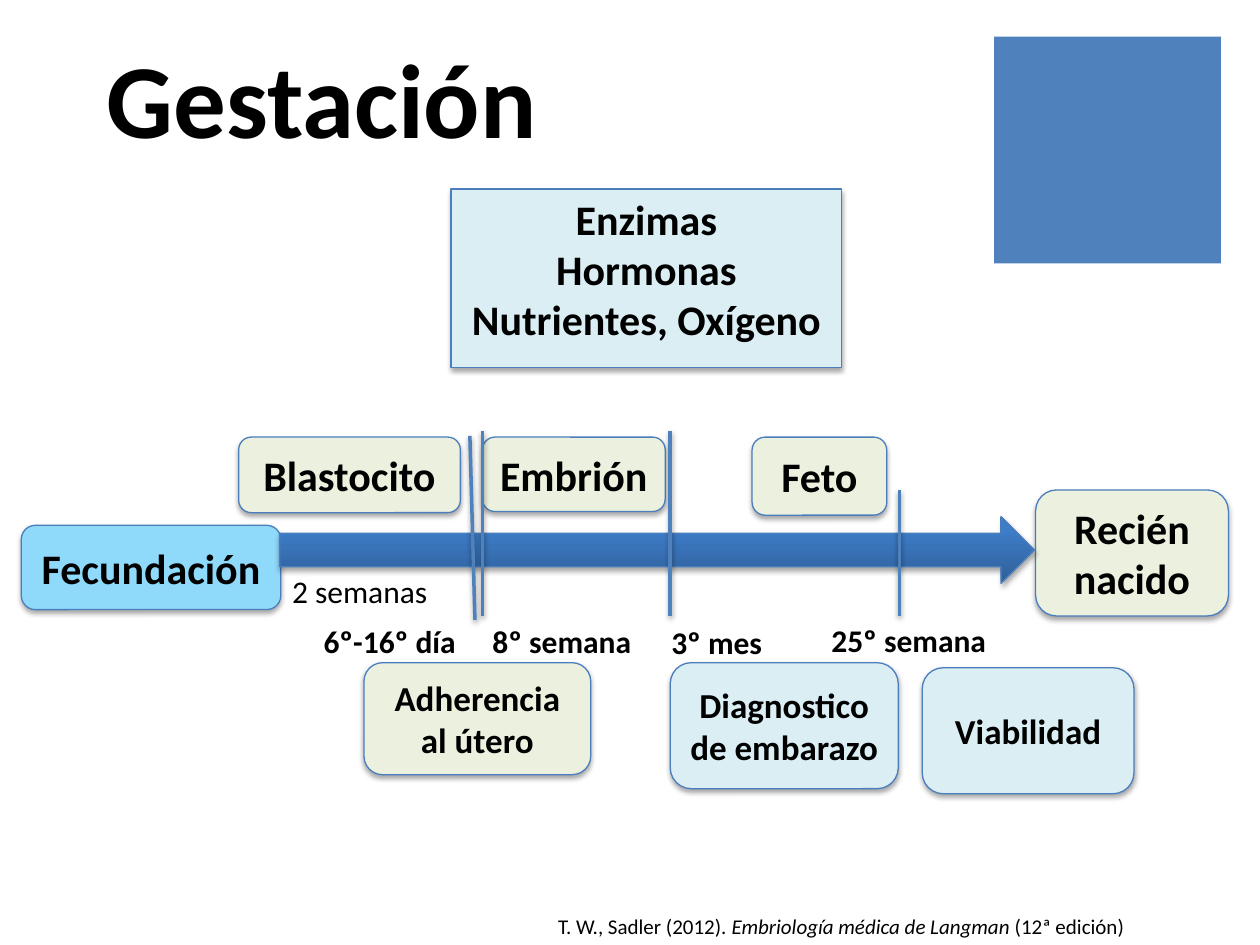
from dataclasses import dataclass

from pptx import Presentation
from pptx.dml.color import RGBColor
from pptx.enum.shapes import MSO_CONNECTOR, MSO_SHAPE
from pptx.enum.text import MSO_ANCHOR, PP_ALIGN
from pptx.oxml import parse_xml
from pptx.util import Pt

RECT = MSO_SHAPE.RECTANGLE
ROUND = MSO_SHAPE.ROUNDED_RECTANGLE
ARROW = MSO_SHAPE.RIGHT_ARROW
STRAIGHT = MSO_CONNECTOR.STRAIGHT
TOP, MIDDLE = MSO_ANCHOR.TOP, MSO_ANCHOR.MIDDLE
LEFT, CENTER = PP_ALIGN.LEFT, PP_ALIGN.CENTER
NS = "http://schemas.openxmlformats.org/drawingml/2006/main"


@dataclass(frozen=True)
class Theme:
    font: str = "Calibri"
    text: str = "000000"
    accent: str = "4F81BD"
    outline: str = "4B7EBC"
    sky: str = "8FD9FB"
    green: str = "EBF1DE"
    pale: str = "DBEEF4"
    arrow_dark: str = "2F5F99"
    arrow_light: str = "3D7CC7"
    title: int = 60
    stage: int = 24
    card: int = 20
    label: int = 18
    source: int = 12


T = Theme()


def rgb(value):
    return RGBColor.from_string(value)


def add_shadow(sp, alpha, dist):
    sp._element.spPr.append(parse_xml(
        f'<a:effectLst xmlns:a="{NS}"><a:outerShdw blurRad="{Pt(3.1)}" dist="{Pt(dist)}" '
        f'dir="5400000" rotWithShape="0"><a:srgbClr val="000000">'
        f'<a:alpha val="{alpha * 1000}"/></a:srgbClr></a:outerShdw></a:effectLst>'))


def write(sp, paragraphs, size, bold=True, align=LEFT, anchor=TOP, wrap=True,
          insets=(7.2, 3.6, 7.2, 3.6)):
    tf = sp.text_frame
    tf.word_wrap = wrap
    tf.vertical_anchor = anchor
    tf.margin_left, tf.margin_top, tf.margin_right, tf.margin_bottom = map(Pt, insets)
    for i, runs in enumerate(paragraphs):
        p = tf.add_paragraph() if i else tf.paragraphs[0]
        p.alignment = align
        for text, italic in runs:
            r = p.add_run()
            r.text = text
            r.font.name = T.font
            r.font.size = Pt(size)
            r.font.bold = bold
            r.font.italic = italic
            r.font.color.rgb = rgb(T.text)


def add_text(s, box, text, size, **fmt):
    sp = s.shapes.add_textbox(*map(Pt, box))
    runs = [(text, False)] if isinstance(text, str) else text
    write(sp, [runs], size, **fmt)


def add_box(s, kind, box, fill):
    sp = s.shapes.add_shape(kind, *map(Pt, box))
    sp.fill.solid()
    sp.fill.fore_color.rgb = rgb(fill)
    sp.line.color.rgb = rgb(T.outline)
    sp.line.width = Pt(0.75)
    add_shadow(sp, 35, 1.8)
    return sp


def add_card(s, kind, box, fill, lines, size, **fmt):
    sp = add_box(s, kind, box, fill)
    write(sp, [[(line, False)] for line in lines], size,
          align=CENTER, anchor=MIDDLE, **fmt)


def add_arrow(s, box):
    sp = add_box(s, ARROW, box, T.arrow_dark)
    sp.fill.gradient()
    sp.fill.gradient_angle = 90
    dark, light = sp.fill.gradient_stops
    dark.position, light.position = 0, 0.8
    dark.color.rgb = rgb(T.arrow_dark)
    light.color.rgb = rgb(T.arrow_light)


def add_marker(s, start, end):
    c = s.shapes.add_connector(STRAIGHT, *map(Pt, start + end))
    c.line.color.rgb = rgb(T.accent)
    c.line.width = Pt(2)
    add_shadow(c, 38, 1.6)


def build_header(s, x, y, w, h):
    side = 129.6
    sp = s.shapes.add_shape(RECT, *map(Pt, (x + w - side, y, side, side)))
    sp.fill.solid()
    sp.fill.fore_color.rgb = rgb(T.accent)
    sp.line.fill.background()
    sp.shadow.inherit = False
    add_text(s, (x, y + 6.5, 494.6, h), "Gestación", T.title, anchor=MIDDLE)


def build_supplies(s, x, y, w, h):
    add_card(s, RECT, (x, y, w, h), T.pale,
             ["Enzimas", "Hormonas", "Nutrientes, Oxígeno"], T.stage,
             insets=(7.2, 3.6, 7.2, 14.6))


def build_timeline(s, x, y, w, h):
    stages = [
        ("Fecundación", 0, 54, 148.3, 48.2, T.sky),
        ("Embrión", 263.5, 3.6, 104.4, 42.5, T.green),
        ("Blastocito", 124.2, 3.6, 126.7, 43.2, T.green),
        ("Feto", 417.6, 3.6, 77, 44.6, T.green),
        ("Recién nacido", w - 110.2, 33.8, 110.2, 72, T.green),
    ]
    cards = [
        ("Adherencia al útero", 195.8, 132.5, 129.6, 64, T.green),
        ("Diagnostico de embarazo", 370.8, 132.5, 130.3, 72, T.pale),
        ("Viabilidad", 514.8, h - 72, 121, 72, T.pale),
    ]
    markers = [
        (370.8, 0, 370.8, 105.8),
        (263.5, 0, 263.5, 105.8),
        (501.8, 33.8, 501.8, 105.8),
        (256.3, 2.9, 259.2, 108),
    ]
    labels = [
        ("2 semanas", 147.6, 77, 108.7, False),
        ("6º-16º día", 165.6, 105.8, 99.4, True),
        ("8º semana", 262.1, 105.8, 108, True),
        ("3º mes", 364.3, 106.5, 72.7, True),
        ("25º semana", 455.8, 105.1, 118.1, True),
    ]
    for text, dx, dy, bw, bh, fill in stages:
        add_card(s, ROUND, (x + dx, y + dy, bw, bh), fill, [text], T.stage,
                 insets=(3.6, 3.6, 3.6, 3.6))
    add_arrow(s, (x + 147.6, y + 49, 431.3, 38.2))
    for x1, y1, x2, y2 in markers:
        add_marker(s, (x + x1, y + y1), (x + x2, y + y2))
    for text, dx, dy, bw, bold in labels:
        add_text(s, (x + dx, y + dy, bw, 29), text, T.label, bold=bold, wrap=False)
    for text, dx, dy, bw, bh, fill in cards:
        add_card(s, ROUND, (x + dx, y + dy, bw, bh), fill, [text], T.card)


def build_source(s, x, y, w, h):
    runs = [("T. W., Sadler (2012). ", False),
            ("Embriología médica de Langman", True),
            (" (12ª edición)", False)]
    add_text(s, (x, y, w, h), runs, T.source, bold=False, wrap=False)


def main():
    prs = Presentation()
    prs.slide_width, prs.slide_height = Pt(720), Pt(540)
    s = prs.slides.add_slide(prs.slide_layouts[6])
    build_header(s, 54, 20.9, 643.7, 55.4)
    build_supplies(s, 257.8, 108, 223.2, 102.2)
    build_timeline(s, 12.2, 246.2, 689.8, 207.4)
    build_source(s, 311.8, 518.4, 404.6, 21.6)
    prs.save("out.pptx")


if __name__ == "__main__":
    main()
